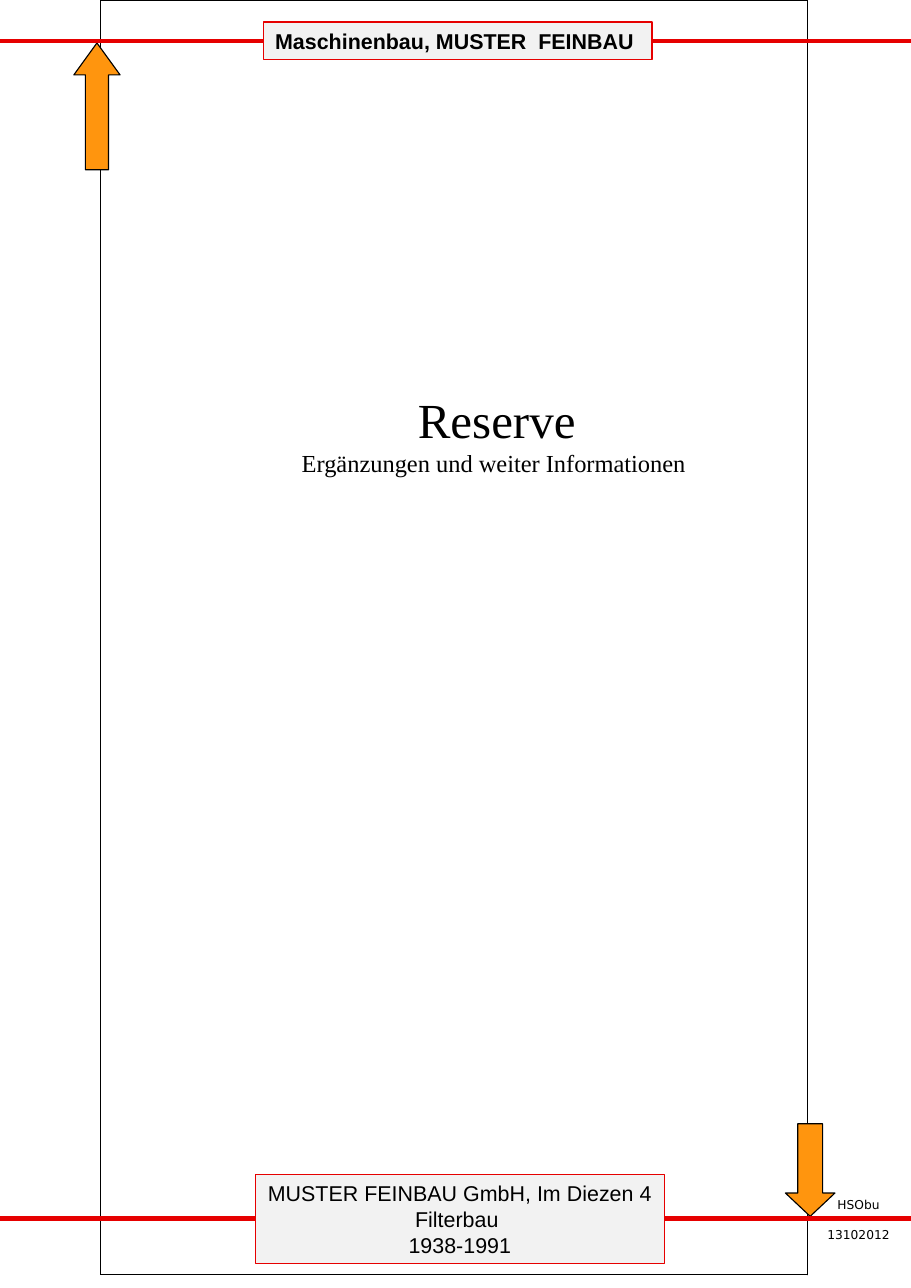
"""Builds the portrait divider page "Reserve" with header, footer and arrows."""
import pptx
import pptx.dml.color
import pptx.enum.dml
import pptx.enum.shapes
import pptx.enum.text
import pptx.oxml
import pptx.oxml.ns
import pptx.util
from pptx.util import Inches

RGB = pptx.dml.color.RGBColor.from_string
KIND = pptx.enum.shapes.MSO_SHAPE
THEME = {
    "ink": RGB("000000"), "red": RGB("E60000"),
    "pale": RGB("F2F2F2"), "amber": RGB("FF950E"),
    "title": 32, "sub": 16, "label": 14, "small": 8,
    "serif": "Times New Roman", "sans": "Arial", "mono": "DejaVu Sans",
}


def draw(kind, box, fill, line, width):
    """Add a preset shape with the given fill and outline."""
    shape = slide.shapes.add_shape(kind, *map(Inches, box))
    shape.shadow.inherit = False
    if fill:
        shape.fill.solid()
        shape.fill.fore_color.rgb = THEME[fill]
    else:
        shape.fill.background()
    shape.line.color.rgb = THEME[line]
    shape.line.width = pptx.util.Pt(width)
    return shape


def write(shape, lines, face, sizes, bold=False, gap=0):
    """Fill a shape with centred lines, one size for each line."""
    frame = shape.text_frame
    frame.word_wrap = False
    frame.auto_size = pptx.enum.text.MSO_AUTO_SIZE.NONE
    frame.vertical_anchor = pptx.enum.text.MSO_ANCHOR.MIDDLE
    frame.text = "\n".join(lines)
    for i, (para, size) in enumerate(zip(frame.paragraphs, sizes)):
        para.alignment = pptx.enum.text.PP_ALIGN.CENTER
        para.space_before = pptx.util.Pt(gap if i else 0)
        para.font.name = THEME[face]
        para.font.size = pptx.util.Pt(THEME[size])
        para.font.bold = bold
        para.font.color.rgb = THEME["ink"]


deck = pptx.Presentation()
deck.slide_width, deck.slide_height = Inches(8.27), Inches(11.69)
slide = deck.slides.add_slide(deck.slide_layouts[5])

title = slide.shapes.title
title.left, title.top = Inches(2.61), Inches(3.48)
title.width, title.height = Inches(3.8), Inches(0.91)
write(title, ["Reserve", "Ergänzungen und weiter Informationen "],
      "serif", ["title", "sub"])

border = draw(KIND.RECTANGLE, (0.91, 0, 6.42, 11.57), None, "ink", 0.25)
border.line.dash_style = pptx.enum.dml.MSO_LINE.ROUND_DOT

for kind, box, head in [
    (KIND.DOWN_ARROW, (7.13, 10.2, 0.45, 0.84), 0.47),
    (KIND.UP_ARROW, (0.67, 0.39, 0.42, 1.15), 0.69),
]:
    arrow = draw(kind, box, "amber", "ink", 0.75)
    arrow.adjustments[0] = 0.5
    arrow.adjustments[1] = head

for y, box, width, lines, bold in [
    (11.06, (2.32, 10.66, 3.71, 0.81), 0.57,
     ["MUSTER FEINBAU GmbH, Im Diezen 4", "Filterbau ", "1938-1991"], False),
    (0.37, (2.39, 0.2, 3.53, 0.34), 0.85,
     ["Maschinenbau, MUSTER  FEINBAU "], True),
]:
    rule = slide.shapes.add_connector(
        pptx.enum.shapes.MSO_CONNECTOR.STRAIGHT,
        0, Inches(y), deck.slide_width, Inches(y))
    rule.line.color.rgb = THEME["red"]
    rule.line.width = pptx.util.Pt(2.83)
    rule.element.spPr.append(
        pptx.oxml.parse_xml(f"<a:effectLst {pptx.oxml.ns.nsdecls('a')}/>"))
    label = draw(KIND.RECTANGLE, box, "pale", "red", width)
    write(label, lines, "sans", ["label"] * len(lines), bold)

stamp = slide.shapes.add_textbox(*map(Inches, (7.41, 10.82, 0.77, 0.5)))
write(stamp, ["HSObu", "13102012"], "mono", ["small"] * 2, gap=9.5)

deck.save("out.pptx")
